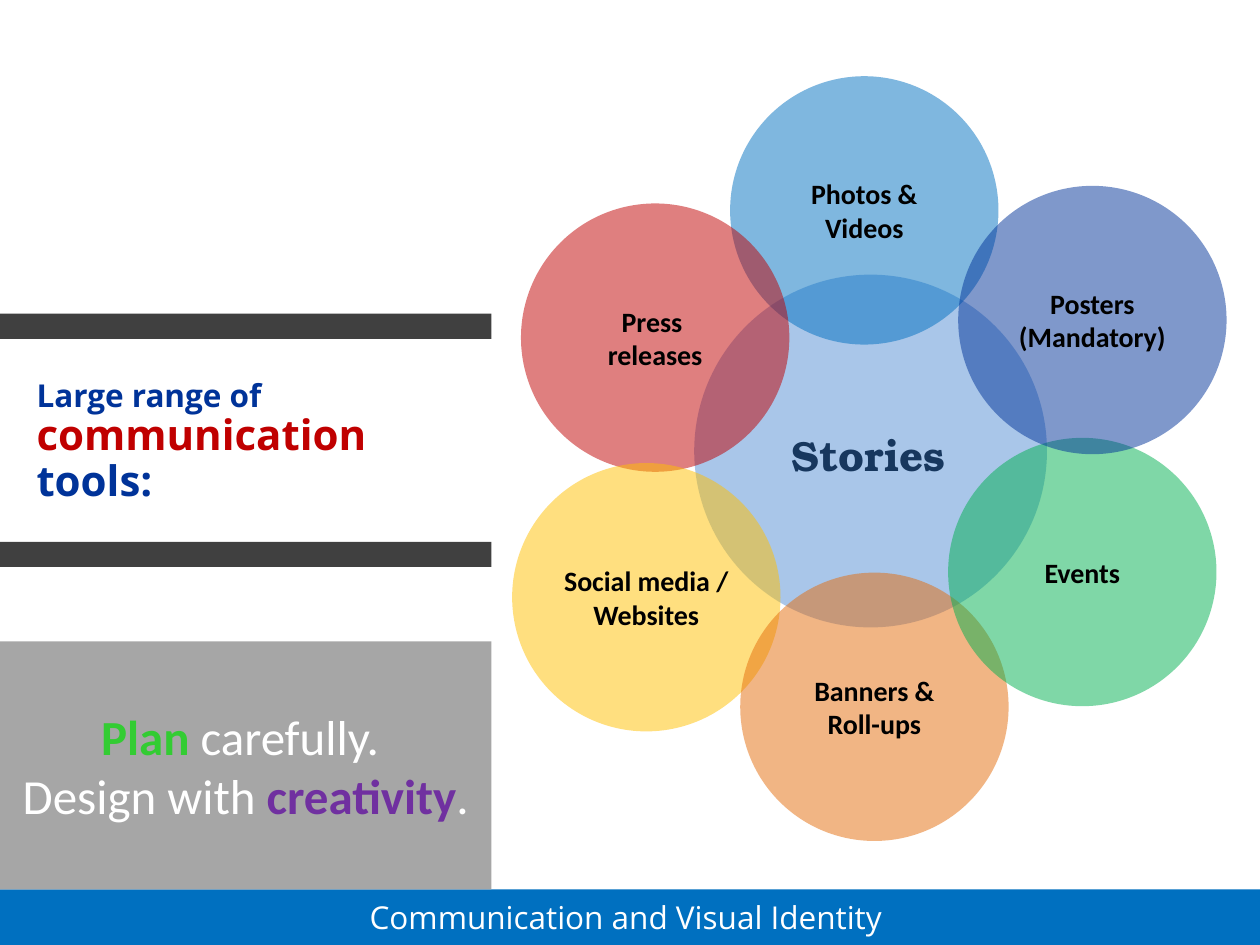
from lxml import etree
from pptx import Presentation
from pptx.dml.color import RGBColor
from pptx.enum.shapes import MSO_SHAPE
from pptx.enum.text import MSO_ANCHOR, PP_ALIGN
from pptx.oxml.ns import qn
from pptx.util import Inches, Pt

RECT, OVAL = MSO_SHAPE.RECTANGLE, MSO_SHAPE.OVAL
MIDDLE, TOP = MSO_ANCHOR.MIDDLE, MSO_ANCHOR.TOP
LEFT, CENTER = PP_ALIGN.LEFT, PP_ALIGN.CENTER

WIDTH, HEIGHT = 10, 7.5
PANEL_WIDTH = 0.39 * WIDTH
FOOTER_HEIGHT = 0.44
FOOTER_TOP = HEIGHT - FOOTER_HEIGHT
MOTTO_TOP = 5.09
RULE_TOPS, RULE_HEIGHT = (2.49, 4.3), 0.2
HUB_X, HUB_Y = 6.9, 3.58
HUB_SIZE, PETAL_SIZE = 2.8, 2.13
PETAL_INSET = 0.05

TITLE = [
    ("Large range of", 18, "003399"),
    ("communication ", 24, "C00000"),
    ("tools:", 24, "003399"),
]
MOTTO = [
    [("Plan", "33CC33", True), (" carefully. ", "FFFFFF", False)],
    [("Design with ", "FFFFFF", False), ("creativity", "7030A0", True), (".", "FFFFFF", False)],
]
PETALS = [
    (["Photos & Videos"], "0070C0", -0.04, -1.91),
    (["Press ", "releases"], "C00000", -1.7, -0.9),
    (["Social media / Websites"], "FFC000", -1.77, 1.16),
    (["Banners &", "Roll-ups"], "E46C0A", 0.04, 2.03),
    (["Events"], "00B050", 1.69, 0.96),
    (["Posters", "(Mandatory)"], "003399", 1.77, -1.04),
]

prs = Presentation()
prs.slide_width, prs.slide_height = Inches(WIDTH), Inches(HEIGHT)
slide = prs.slides.add_slide(prs.slide_layouts[6])


def rgb(color):
    return RGBColor.from_string(color)


def add_block(kind, x, y, w, h, color, opacity=100):
    block = slide.shapes.add_shape(kind, Inches(x), Inches(y), Inches(w), Inches(h))
    block.shadow.inherit = False
    block.line.fill.background()
    block.fill.solid()
    block.fill.fore_color.rgb = rgb(color)
    if opacity < 100:
        fill = block.fill._xPr.find(qn("a:solidFill"))
        etree.SubElement(fill[0], qn("a:alpha"), val=str(opacity * 1000))
    return block


def add_circle(center_x, center_y, size, color):
    return add_block(OVAL, center_x - size / 2, center_y - size / 2, size, size, color, 50)


def add_text_box(x, y, w, h, wrap=True):
    box = slide.shapes.add_textbox(Inches(x), Inches(y), Inches(w), Inches(h))
    box.text_frame.word_wrap = wrap
    return box


def add_run(paragraph, text, size, font, color, bold):
    run = paragraph.add_run()
    run.text = text
    run.font.size, run.font.name, run.font.bold = Pt(size), font, bold
    run.font.color.rgb = rgb(color)


def write(holder, lines, size, font, align=CENTER, anchor=MIDDLE):
    frame = holder.text_frame
    frame.vertical_anchor = anchor
    for number, line in enumerate(lines):
        paragraph = frame.add_paragraph() if number else frame.paragraphs[0]
        paragraph.alignment = align
        for text, color, bold in line:
            add_run(paragraph, text, size, font, color, bold)


footer = add_block(RECT, 0, FOOTER_TOP, WIDTH, FOOTER_HEIGHT, "0070C0")
write(footer, [[("Communication and Visual Identity ", "FFFFFF", False)]], 18, "Open Sans")

for rule_top in RULE_TOPS:
    add_block(RECT, 0, rule_top, PANEL_WIDTH, RULE_HEIGHT, "404040")

title = add_text_box(0, RULE_TOPS[0], 4.06, 2.05)
title.text_frame.margin_left = Inches(0.29)
title.text_frame.vertical_anchor = MIDDLE
heading = title.text_frame.paragraphs[0]
heading.alignment, heading.line_spacing = LEFT, 0.9
for number, (text, size, color) in enumerate(TITLE):
    if number:
        heading.add_line_break()
    add_run(heading, text, size, "Open Sans", color, True)

add_circle(HUB_X + 0.01, HUB_Y, HUB_SIZE, "558ED5")
for lines, color, dx, dy in PETALS:
    petal = add_circle(HUB_X + dx, HUB_Y + dy, PETAL_SIZE, color)
    petal.text_frame.margin_left = petal.text_frame.margin_right = Inches(PETAL_INSET)
    write(petal, [[(line, "000000", True)] for line in lines], 16, "Calibri")

hub_label = add_text_box(HUB_X - 0.72, 3.36, 1.43, 0.5, wrap=False)
write(hub_label, [[("Stories", "17375E", True)]], 24, "TeX Gyre Bonum", anchor=TOP)

motto = add_block(RECT, 0, MOTTO_TOP, PANEL_WIDTH, FOOTER_TOP - MOTTO_TOP, "A6A6A6")
write(motto, MOTTO, 28, "Calibri")

prs.save("out.pptx")
